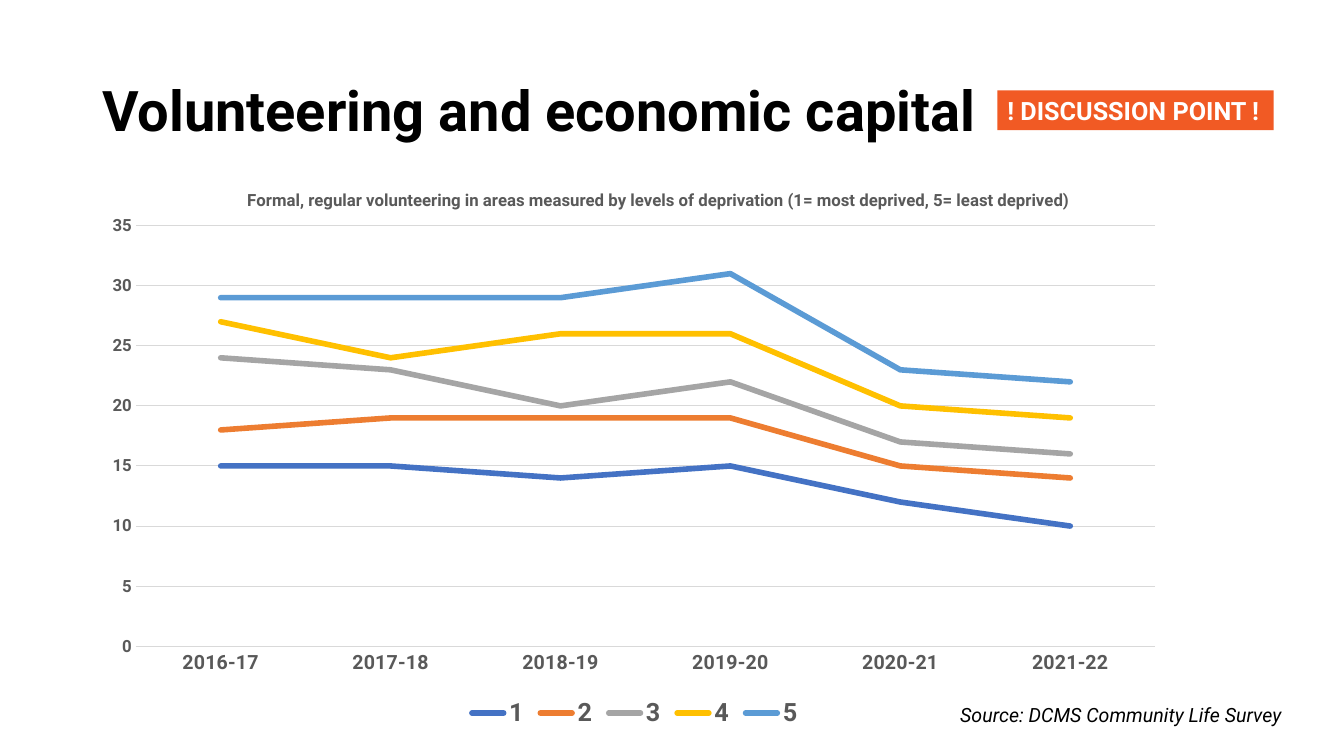
from dataclasses import dataclass

from lxml import etree
from pptx import Presentation
from pptx.chart.data import CategoryChartData
from pptx.dml.color import RGBColor
from pptx.enum.chart import XL_CHART_TYPE, XL_LEGEND_POSITION, XL_MARKER_STYLE, XL_TICK_MARK
from pptx.enum.shapes import MSO_SHAPE
from pptx.enum.text import MSO_ANCHOR, MSO_AUTO_SIZE, PP_ALIGN
from pptx.oxml.ns import qn
from pptx.util import Pt

LINE = XL_CHART_TYPE.LINE
BOTTOM = XL_LEGEND_POSITION.BOTTOM
NO_MARK = XL_MARKER_STYLE.NONE
NO_TICK = XL_TICK_MARK.NONE
RECT = MSO_SHAPE.RECTANGLE
MIDDLE = MSO_ANCHOR.MIDDLE
GROW = MSO_AUTO_SIZE.SHAPE_TO_FIT_TEXT
LEFT = PP_ALIGN.LEFT
TITLE_ONLY = 5
SCALE = 9525  # EMU in one px, 96 px to the inch


@dataclass(frozen=True)
class Theme:
    font: str = "Roboto"
    ink: str = "000000"
    paper: str = "FFFFFF"
    grey: str = "595959"
    grid: str = "D9D9D9"
    badge: str = "F15A24"
    lines: tuple = ("4472C4", "ED7D31", "A5A5A5", "FFC000", "5B9BD5")
    head: int = 40
    large: int = 18
    body: int = 14
    small: int = 12


THEME = Theme()

YEARS = ["2016-17", "2017-18", "2018-19", "2019-20", "2020-21", "2021-22"]
RATES = {
    "1": [15, 15, 14, 15, 12, 10],
    "2": [18, 19, 19, 19, 15, 14],
    "3": [24, 23, 20, 22, 17, 16],
    "4": [27, 24, 26, 26, 20, 19],
    "5": [29, 29, 29, 31, 23, 22],
}
CAPTION = ("Formal, regular volunteering in areas measured by levels of "
           "deprivation (1= most deprived, 5= least deprived)")


def px(*sizes):
    return [size * SCALE for size in sizes]


def rgb(code):
    return RGBColor.from_string(code)


def set_font(font, size, color, bold=False, italic=False):
    font.name = THEME.font
    font.size = Pt(size)
    font.bold = bold
    font.italic = italic
    font.color.rgb = rgb(color)


def set_line(line, color, width):
    line.color.rgb = rgb(color)
    line.width = Pt(width)


def set_label(shape, text, size, color, **style):
    """Write one unwrapped line in a shape that fits its text."""
    frame = shape.text_frame
    frame.word_wrap = False
    frame.auto_size = GROW
    para = frame.paragraphs[0]
    para.text = text
    para.alignment = LEFT
    set_font(para.font, size, color, **style)


def add_title(slide, text, box):
    title = slide.shapes.title
    title.left, title.top, title.width, title.height = px(*box)
    frame = title.text_frame
    frame.vertical_anchor = MIDDLE
    para = frame.paragraphs[0]
    para.text = text
    para.alignment = LEFT
    para.line_spacing = 0.9
    set_font(para.font, THEME.head, THEME.ink, bold=True)


def add_badge(slide, text, box):
    badge = slide.shapes.add_shape(RECT, *px(*box))
    badge.shadow.inherit = False
    badge.fill.solid()
    badge.fill.fore_color.rgb = rgb(THEME.badge)
    badge.line.fill.background()
    set_label(badge, text, THEME.large, THEME.paper, bold=True)


def add_note(slide, text, box):
    note = slide.shapes.add_textbox(*px(*box))
    set_label(note, text, THEME.body, THEME.ink, italic=True)


def place(host, index, **parts):
    """Fix a chart part at fractions of the chart's size."""
    layout = host.find(qn("c:layout"))
    if layout is None:
        layout = etree.Element(qn("c:layout"))
        host.insert(index, layout)
    manual = etree.SubElement(layout, qn("c:manualLayout"))
    for name, value in parts.items():
        etree.SubElement(manual, qn(f"c:{name}")).set("val", str(value))


def style_axes(chart):
    cat, val = chart.category_axis, chart.value_axis
    for axis, size in ((cat, THEME.body), (val, THEME.small)):
        axis.major_tick_mark = axis.minor_tick_mark = NO_TICK
        set_font(axis.tick_labels.font, size, THEME.grey, bold=True)
    set_line(cat.format.line, THEME.grid, 0.75)
    val.format.line.fill.background()
    val.has_major_gridlines = True
    set_line(val.major_gridlines.format.line, THEME.grid, 0.75)
    val.minimum_scale, val.maximum_scale, val.major_unit = 0, 35, 5


def style_series(chart):
    for series, color in zip(chart.plots[0].series, THEME.lines):
        series.smooth = False
        series.marker.style = NO_MARK
        line = series.format.line
        set_line(line, color, 4)
        for node in series.format.element.iter(qn("a:ln")) if hasattr(
                series.format, "element") else series._element.iter(qn("a:ln")):
            node.set("cap", "rnd")


def add_rates(slide, box):
    data = CategoryChartData()
    data.categories = YEARS
    for name, values in RATES.items():
        data.add_series(name, values)
    chart = slide.shapes.add_chart(LINE, *px(*box), data).chart
    chart.plots[0].vary_by_categories = False
    set_font(chart.font, THEME.small, THEME.grey)

    chart.has_title = True
    para = chart.chart_title.text_frame.paragraphs[0]
    para.text = CAPTION
    set_font(para.font, THEME.small, THEME.grey, bold=True)
    chart.has_legend = True
    chart.legend.position = BOTTOM
    chart.legend.include_in_layout = False
    set_font(chart.legend.font, THEME.large, THEME.grey, bold=True)

    style_axes(chart)
    style_series(chart)
    root = chart.element
    place(root.find(".//" + qn("c:title")), 1,
          xMode="edge", yMode="edge", x=0.14, y=0.05)
    place(root.find(".//" + qn("c:plotArea")), 0, layoutTarget="inner",
          xMode="edge", yMode="edge", x=0.04, y=0.12, w=0.94, h=0.73)


def main():
    deck = Presentation()
    deck.slide_width, deck.slide_height = px(1280, 720)
    slide = deck.slides.add_slide(deck.slide_layouts[TITLE_ONLY])
    add_title(slide, "Volunteering and economic capital", (88, 38, 1104, 139))
    add_rates(slide, (88, 149, 1033, 549))
    add_note(slide, "Source: DCMS Community Life Survey", (905, 665, 337, 33))
    add_badge(slide, "! DISCUSSION POINT !", (950, 86, 263, 38))
    deck.save("out.pptx")


if __name__ == "__main__":
    main()
